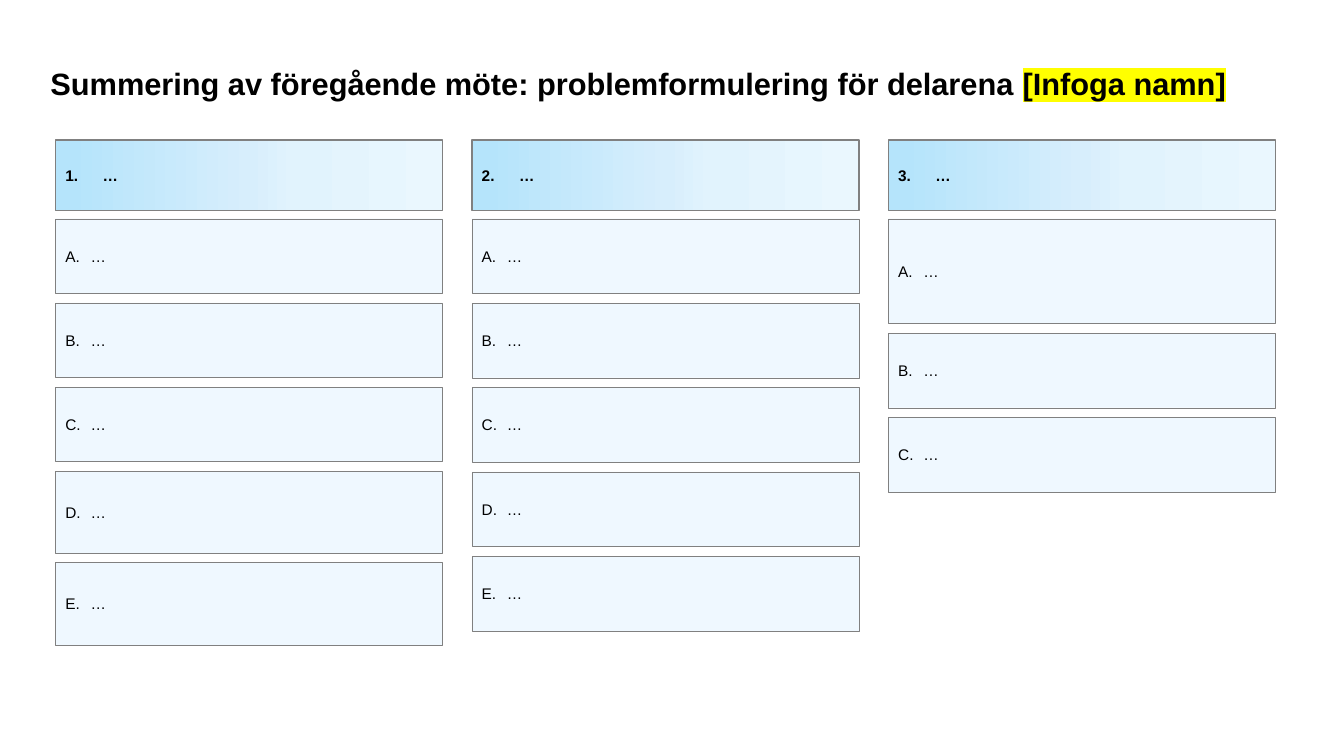
from dataclasses import dataclass

from pptx import Presentation
from pptx.dml.color import RGBColor
from pptx.enum.shapes import MSO_SHAPE as Shape
from pptx.enum.text import MSO_ANCHOR as Anchor, MSO_AUTO_SIZE as AutoSize, PP_ALIGN as Align
from pptx.oxml.ns import qn
from pptx.oxml.xmlchemy import OxmlElement
from pptx.util import Inches, Pt


@dataclass(frozen=True)
class Theme:
    font: str = "Arial"
    title_size: float = 22
    text_size: float = 11
    text: str = "000000"
    highlight: str = "FFFF00"
    line: str = "808080"
    item_fill: str = "EFF8FF"
    header_stops: tuple = ((0, "EAF7FE"), (38, "E1F3FD"), (50, "D7EEFC"),
                           (96, "B5E4FB"), (100, "B3E3FA"))


THEME = Theme()
COLUMN_LEFTS = (0.55, 4.68, 8.81)
COLUMN_WIDTH = 3.84
COLUMN_TOP = 1.39
HEADER_HEIGHT = 0.7
ITEMS_OFFSET = 0.78
# Bottom edge of each column and the heights of its items
COLUMNS = (
    (6.4, (0.74, 0.74, 0.74, 0.81, 0.82)),
    (6.26, (0.74,) * 5),
    (4.88, (1.04, 0.74, 0.74)),
)


def set_attributes(target, values):
    for name, value in values.items():
        setattr(target, name, value)


def add_child(parent, tag, **attributes):
    child = OxmlElement(tag)
    for name, value in attributes.items():
        child.set(name, str(value))
    parent.append(child)
    return child


def add_span(para, text, size, bold):
    span = para.add_run()
    span.text = text
    set_attributes(span.font, {"name": THEME.font, "size": Pt(size), "bold": bold})
    span.font.color.rgb = RGBColor.from_string(THEME.text)
    return span


def highlight(span):
    mark = OxmlElement("a:highlight")
    add_child(mark, "a:srgbClr", val=THEME.highlight)
    span._r.rPr.find(qn("a:latin")).addprevious(mark)


def fill_gradient(shape):
    shape.fill.gradient()
    shape.fill.gradient_angle = 180
    stops = shape.fill._xPr.find(qn("a:gradFill")).find(qn("a:gsLst"))
    for stop in list(stops):
        stops.remove(stop)
    for percent, color in THEME.header_stops:
        add_child(add_child(stops, "a:gs", pos=percent * 1000), "a:srgbClr", val=color)


def add_numbered_box(page, left, top, width, height, scheme, number, indent,
                     line_width, bold=False):
    """Add a bordered rectangle whose one paragraph is automatically numbered."""
    box = page.shapes.add_shape(Shape.RECTANGLE, *map(Inches, (left, top, width, height)))
    box.shadow.inherit = False
    box.line.color.rgb = RGBColor.from_string(THEME.line)
    box.line.width = Pt(line_width)
    set_attributes(box.text_frame, {"word_wrap": True, "vertical_anchor": Anchor.MIDDLE})
    para = box.text_frame.paragraphs[0]
    para.alignment = Align.LEFT
    properties = para._p.get_or_add_pPr()
    properties.set("marL", str(Inches(indent)))
    properties.set("indent", str(-Inches(indent)))
    add_child(properties, "a:buFont", typeface=THEME.font)
    add_child(properties, "a:buAutoNum", type=scheme, startAt=number)
    add_span(para, "…", THEME.text_size, bold)
    return box


def add_title(page, left, top, width, height):
    title = page.shapes.title
    set_attributes(title, {"left": Inches(left), "top": Inches(top),
                           "width": Inches(width), "height": Inches(height)})
    set_attributes(title.text_frame, {"word_wrap": True, "auto_size": AutoSize.NONE,
                                      "vertical_anchor": Anchor.BOTTOM})
    para = title.text_frame.paragraphs[0]
    set_attributes(para, {"alignment": Align.LEFT, "line_spacing": 0.95})
    add_span(para, "Summering av föregående möte: problemformulering för delarena ",
             THEME.title_size, True)
    highlight(add_span(para, "[Infoga namn]", THEME.title_size, True))


def add_column(page, left, top, width, bottom, number, heights):
    """Add a numbered header and spread its lettered items evenly down to bottom."""
    header = add_numbered_box(page, left, top, width, HEADER_HEIGHT, "arabicPeriod",
                              number, indent=0.37, line_width=1, bold=True)
    fill_gradient(header)
    item_top = top + ITEMS_OFFSET
    gap = (bottom - item_top - sum(heights)) / (len(heights) - 1)
    for letter, height in enumerate(heights, 1):
        item = add_numbered_box(page, left, item_top, width, height, "alphaUcPeriod",
                                letter, indent=0.25, line_width=0.25)
        item.fill.solid()
        item.fill.fore_color.rgb = RGBColor.from_string(THEME.item_fill)
        item_top += height + gap


def main():
    deck = Presentation()
    set_attributes(deck, {"slide_width": Inches(13.33), "slide_height": Inches(7.5)})
    page = deck.slides.add_slide(deck.slide_layouts.get_by_name("Title Only"))
    add_title(page, 0.4, 0.29, 12.4, 0.78)
    for number, (left, (bottom, heights)) in enumerate(zip(COLUMN_LEFTS, COLUMNS), 1):
        add_column(page, left, COLUMN_TOP, COLUMN_WIDTH, bottom, number, heights)
    deck.save("out.pptx")


if __name__ == "__main__":
    main()
